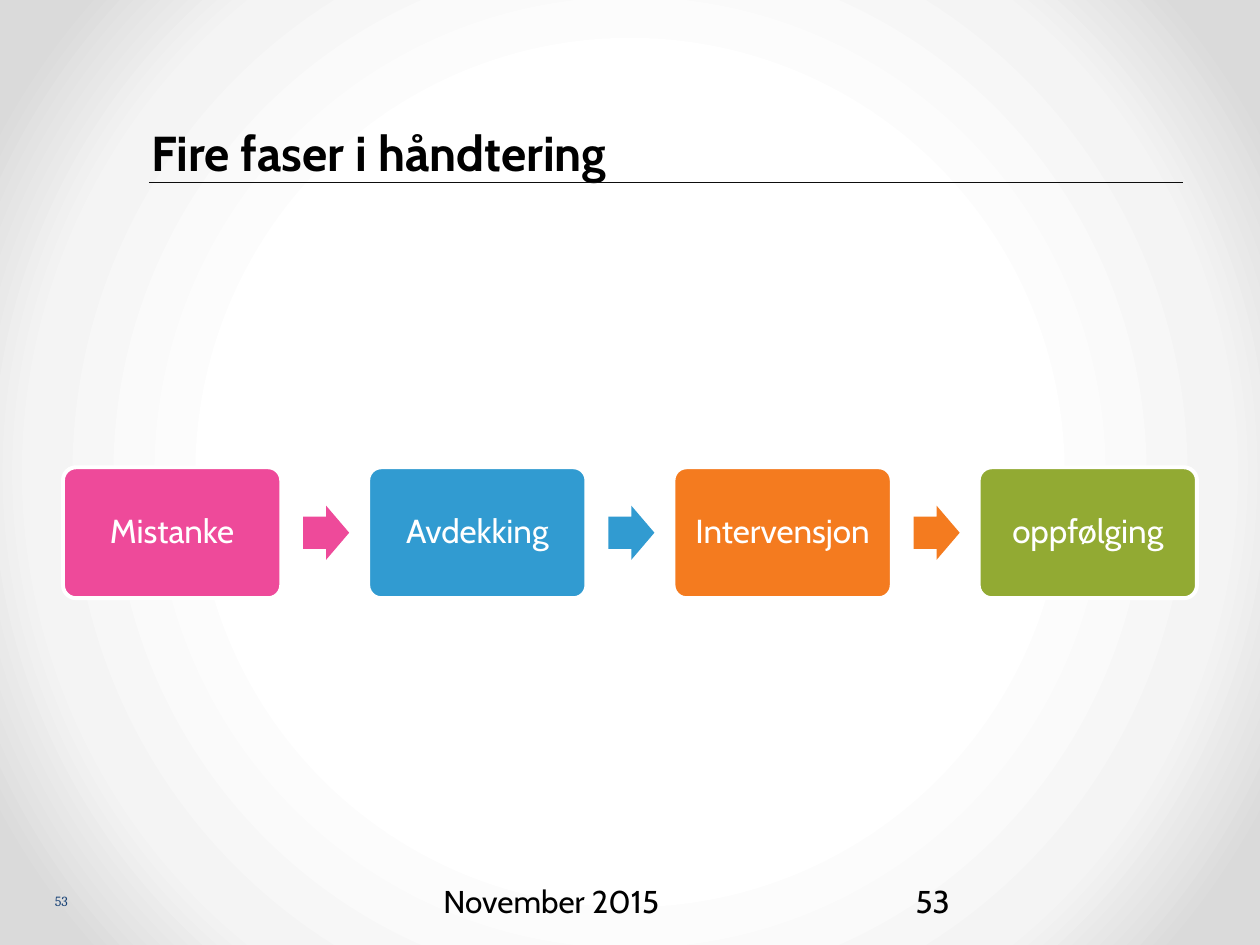
from dataclasses import dataclass

from lxml import etree
from pptx import Presentation
from pptx.dml.color import RGBColor as Rgb
from pptx.enum.shapes import MSO_CONNECTOR as Link, MSO_SHAPE as Form
from pptx.enum.text import MSO_ANCHOR as Anchor, MSO_AUTO_SIZE as Fit, PP_ALIGN as Align
from pptx.oxml import parse_xml
from pptx.oxml.ns import nsdecls, qn
from pptx.util import Cm, Pt


@dataclass(frozen=True)
class Theme:
    """Colours, fonts and type sizes of the slide."""
    font: str = "Cabin"
    serif: str = "Cambria"
    ink: str = "000000"
    rule: str = "0D0D0D"
    navy: str = "194377"
    white: str = "FFFFFF"
    glow: tuple = ((50, "FFFFFF"), (76, "F4F4F4"), (92, "DADADA"))
    title: int = 28
    note: int = 18
    phase: int = 19
    tiny: int = 8


THEME = Theme()
PHASES = (("Mistanke", "EE4A9A"), ("Avdekking", "319BD1"),
          ("Intervensjon", "F47B1F"), ("oppfølging", "92AA33"))


def write(frame, text, size, tint, align=Align.LEFT, face=THEME.font, bold=False):
    """Put one styled paragraph in a text frame and return it."""
    frame.text = text
    para = frame.paragraphs[0]
    para.alignment = align
    font = para.font
    font.name, font.size, font.bold = face, Pt(size), bold
    font.color.rgb = Rgb.from_string(tint)
    return para


def inset(frame, gap):
    """Give a text frame the same margin on every side."""
    frame.margin_left = frame.margin_right = Cm(gap)
    frame.margin_top = frame.margin_bottom = Cm(gap)


def paint(slide):
    """Fill the background with a round gradient."""
    slide.background.fill.gradient()
    old = slide.element.find(".//" + qn("a:gradFill"))
    stops = "".join(f'<a:gs pos="{pos * 1000}"><a:srgbClr val="{tint}"/></a:gs>'
                    for pos, tint in THEME.glow)
    new = parse_xml(
        f'<a:gradFill {nsdecls("a")} rotWithShape="1"><a:gsLst>{stops}</a:gsLst>'
        '<a:path path="circle"><a:fillToRect l="50000" t="50000" r="50000" b="50000"/>'
        '</a:path></a:gradFill>')
    old.getparent().replace(old, new)


def header(slide, x, y, w, h):
    """Place the title and the thin rule below it."""
    rule = slide.shapes.add_connector(
        Link.STRAIGHT, Cm(x - 0.05), Cm(y + h + 0.03), Cm(x + w - 0.05), Cm(y + h + 0.03))
    rule.line.color.rgb = Rgb.from_string(THEME.rule)
    rule.line.width = Pt(0.25)
    etree.SubElement(rule.element.spPr, qn("a:effectLst"))
    title = slide.shapes.title
    title.left, title.top, title.width, title.height = Cm(x), Cm(y), Cm(w), Cm(h)
    frame = title.text_frame
    frame.auto_size = Fit.NONE
    frame.vertical_anchor = Anchor.BOTTOM
    inset(frame, 0)
    write(frame, slide_title, THEME.title, THEME.ink, bold=True)


def block(slide, form, box, tint, *adjust):
    """Add a flat filled shape with the given adjustments."""
    shape = slide.shapes.add_shape(form, *map(Cm, box))
    shape.shadow.inherit = False
    shape.fill.solid()
    shape.fill.fore_color.rgb = Rgb.from_string(tint)
    shape.line.fill.background()
    for spot, value in enumerate(adjust):
        shape.adjustments[spot] = value
    return shape


def flow(slide, x, y, w, h):
    """Spread the phases evenly over the box, with arrows between."""
    wide, long, tall = 4.4, 0.93, 1.09
    step = (w - wide) / (len(PHASES) - 1)
    for spot, (name, tint) in enumerate(PHASES):
        left = x + spot * step
        card = block(slide, Form.ROUNDED_RECTANGLE, (left, y, wide, h), tint, 0.1)
        card.line.color.rgb = Rgb.from_string(THEME.white)
        card.line.width = Pt(2.25)
        frame = card.text_frame
        frame.word_wrap = True
        frame.vertical_anchor = Anchor.MIDDLE
        inset(frame, 0.2)
        para = write(frame, name, THEME.phase, THEME.white, Align.CENTER)
        para.line_spacing = 0.9
        if spot < len(PHASES) - 1:
            block(slide, Form.RIGHT_ARROW,
                  (left + wide + 0.44, y + (h - tall) / 2, long, tall), tint, 0.6, 0.5)


def label(slide, box, text, *style):
    """Add a text box with one styled line."""
    frame = slide.shapes.add_textbox(*map(Cm, box)).text_frame
    frame.word_wrap = True
    write(frame, text, *style)
    return frame


def footer(slide, x, y, w, h):
    """Place the date and both page numbers."""
    page = "53"
    small = label(slide, (x, y + 0.35, 1.07, 0.33), page,
                  THEME.tiny, THEME.navy, Align.RIGHT, THEME.serif)
    inset(small, 0)
    label(slide, (x + 8.39, y, 8.05, h), "November 2015", THEME.note, THEME.ink)
    label(slide, (x + w - 5.92, y, 5.92, h), page, THEME.note, THEME.ink)


slide_title = "Fire faser i håndtering"


def main():
    """Build the slide and save it."""
    deck = Presentation()
    deck.slide_width, deck.slide_height = Cm(25.4), Cm(19.05)
    slide = deck.slides.add_slide(deck.slide_layouts[5])
    paint(slide)
    header(slide, 3.05, 0.53, 20.85, 3.12)
    flow(slide, 1.27, 9.42, 22.86, 2.64)
    footer(slide, 0.3, 17.65, 23.83, 1.02)
    deck.save("out.pptx")


if __name__ == "__main__":
    main()
